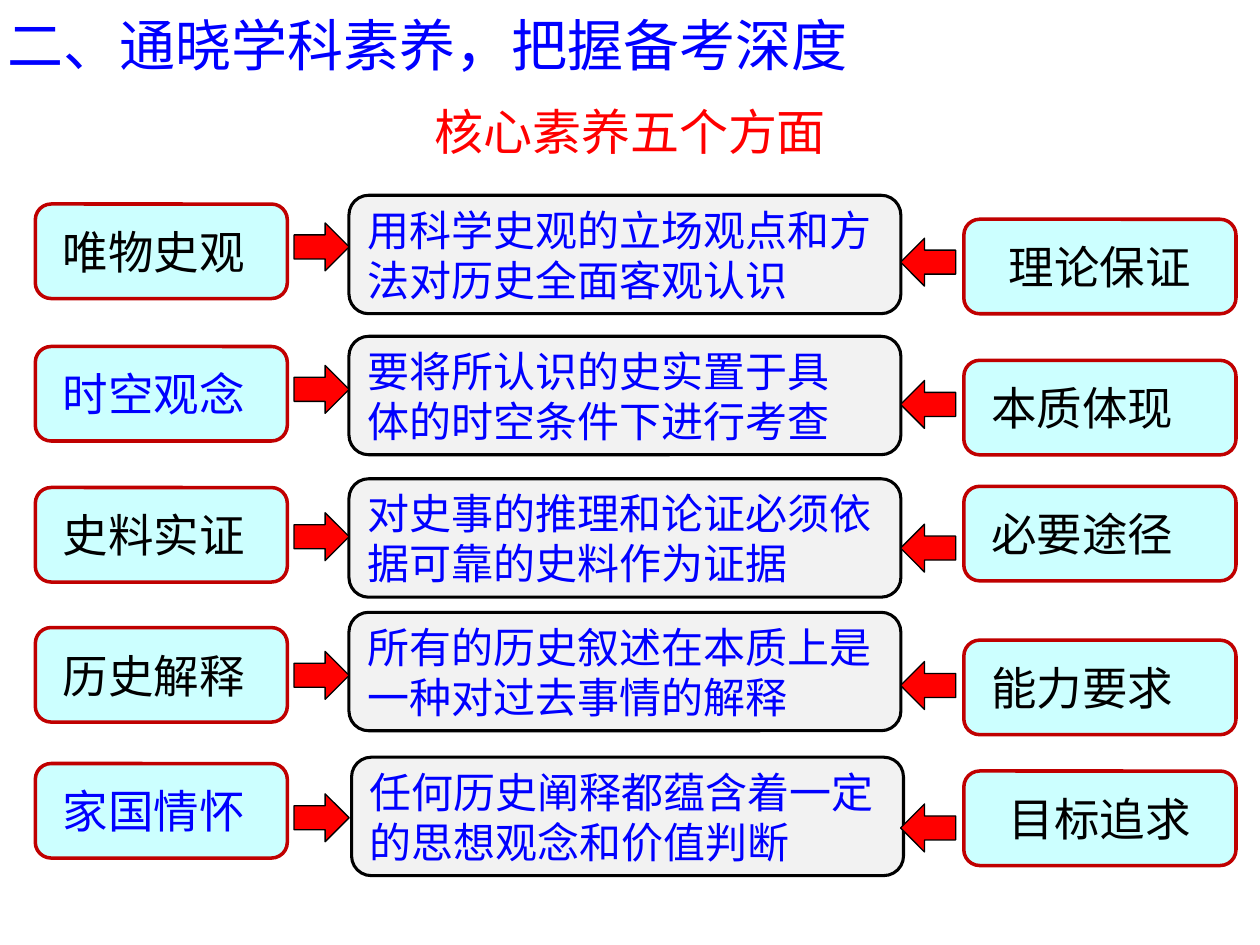
from dataclasses import dataclass

from lxml import etree
from pptx import Presentation
from pptx.dml.color import RGBColor
from pptx.enum.shapes import MSO_SHAPE
from pptx.enum.text import MSO_ANCHOR, MSO_AUTO_SIZE, PP_ALIGN
from pptx.oxml.ns import qn
from pptx.util import Pt

ROUNDED = MSO_SHAPE.ROUNDED_RECTANGLE
RIGHT_ARROW, LEFT_ARROW = MSO_SHAPE.RIGHT_ARROW, MSO_SHAPE.LEFT_ARROW
LEFT, CENTER = PP_ALIGN.LEFT, PP_ALIGN.CENTER
TOP, MIDDLE = MSO_ANCHOR.TOP, MSO_ANCHOR.MIDDLE
TITLE_ONLY = 5


@dataclass(frozen=True)
class Theme:
    font: str = "Noto Sans CJK SC"
    blue: str = "0000FF"
    red: str = "FF0000"
    black: str = "000000"
    dark_red: str = "C00000"
    cyan: str = "CCFFFF"
    gray: str = "F2F2F2"
    title_size: float = 32
    subtitle_size: float = 28
    label_size: float = 26
    detail_size: float = 24


THEME = Theme()
INSET = 7.2
INDENTED = 13


@dataclass(frozen=True)
class Literacy:
    """One row: texts, and the tops of its three boxes and two arrows."""
    name: str
    detail: str
    role: str
    tops: tuple
    name_color: str = THEME.black
    role_align: PP_ALIGN = LEFT
    detail_left: float = 199.4


LITERACIES = (
    Literacy("唯物史观", "用科学史观的立场观点和方法对历史全面客观认识", "理论保证",
             (116.6, 127.4, 111.6, 136.1, 125.3), role_align=CENTER),
    Literacy("时空观念", "要将所认识的史实置于具\n体的时空条件下进行考查", "本质体现",
             (198, 208.8, 192.2, 217.4, 205.9), name_color=THEME.blue),
    Literacy("史料实证", "对史事的推理和论证必须依据可靠的史料作为证据", "必要途径",
             (278.6, 293, 273.6, 299.5, 277.9)),
    Literacy("历史解释", "所有的历史叙述在本质上是一种对过去事情的解释", "能力要求",
             (358.6, 372.2, 349.9, 378, 365.8)),
    Literacy("家国情怀", "任何历史阐释都蕴含着一定的思想观念和价值判断", "目标追求",
             (436.3, 453.6, 432.7, 459.4, 440.6), name_color=THEME.blue,
             role_align=CENTER, detail_left=200.9),
)


def write_text(shape, text, *, size, color, align=LEFT, anchor=MIDDLE,
               indent=INSET, wrap=True):
    frame = shape.text_frame
    frame.text = text
    frame.auto_size = MSO_AUTO_SIZE.NONE
    frame.word_wrap = wrap
    frame.vertical_anchor = anchor
    frame.margin_left = Pt(indent)
    for paragraph in frame.paragraphs:
        paragraph.alignment = align
        for run in paragraph.runs:
            run.font.size = Pt(size)
            run.font.name = THEME.font
            run.font.color.rgb = RGBColor.from_string(color)
            # East Asian characters take their typeface from a:ea
            east_asian = etree.SubElement(run.font._element, qn("a:ea"))
            east_asian.set("typeface", THEME.font)


def add_block(slide, kind, left, top, width, height, *, fill, line, weight):
    block = slide.shapes.add_shape(kind, Pt(left), Pt(top), Pt(width), Pt(height))
    block.shadow.inherit = False
    block.fill.solid()
    block.fill.fore_color.rgb = RGBColor.from_string(fill)
    block.line.color.rgb = RGBColor.from_string(line)
    block.line.width = Pt(weight)
    return block


def add_label(slide, text, left, top, width, *, color=THEME.black, align=LEFT):
    label = add_block(slide, ROUNDED, left, top, width, 54,
                      fill=THEME.cyan, line=THEME.dark_red, weight=2)
    write_text(label, text, size=THEME.label_size, color=color, align=align,
               indent=INSET if align == CENTER else INDENTED)


def add_detail(slide, text, left, top):
    detail = add_block(slide, ROUNDED, left, top, 315.4, 67.7,
                       fill=THEME.gray, line=THEME.black, weight=1.75)
    write_text(detail, text, size=THEME.detail_size, color=THEME.blue)


def add_arrow(slide, kind, left, top):
    add_block(slide, kind, left, top, 31.5, 27.4,
              fill=THEME.red, line=THEME.black, weight=0.75)


def add_headings(slide):
    title = slide.shapes.title
    title.left, title.top, title.width, title.height = Pt(-2.9), Pt(2.2), Pt(548.6), Pt(46)
    write_text(title, "二、通晓学科素养，把握备考深度", size=THEME.title_size,
               color=THEME.blue, anchor=TOP)
    subtitle = slide.shapes.add_textbox(Pt(241.2), Pt(54.7), Pt(240.5), Pt(41))
    write_text(subtitle, "核心素养五个方面", size=THEME.subtitle_size,
               color=THEME.red, anchor=TOP, wrap=False)


def add_literacy(slide, row):
    name_top, in_arrow_top, detail_top, out_arrow_top, role_top = row.tops
    add_detail(slide, row.detail, row.detail_left, detail_top)
    add_label(slide, row.name, 20.2, name_top, 144, color=row.name_color)
    add_label(slide, row.role, 550.8, role_top, 155.5, align=row.role_align)
    add_arrow(slide, RIGHT_ARROW, 168, in_arrow_top)
    add_arrow(slide, LEFT_ARROW, 514.6, out_arrow_top)


def main():
    deck = Presentation()
    deck.slide_width, deck.slide_height = Pt(720), Pt(540)
    slide = deck.slides.add_slide(deck.slide_layouts[TITLE_ONLY])
    add_headings(slide)
    # Five rows: name, arrow, explanation, arrow, role
    for row in LITERACIES:
        add_literacy(slide, row)
    deck.save("out.pptx")


if __name__ == "__main__":
    main()
